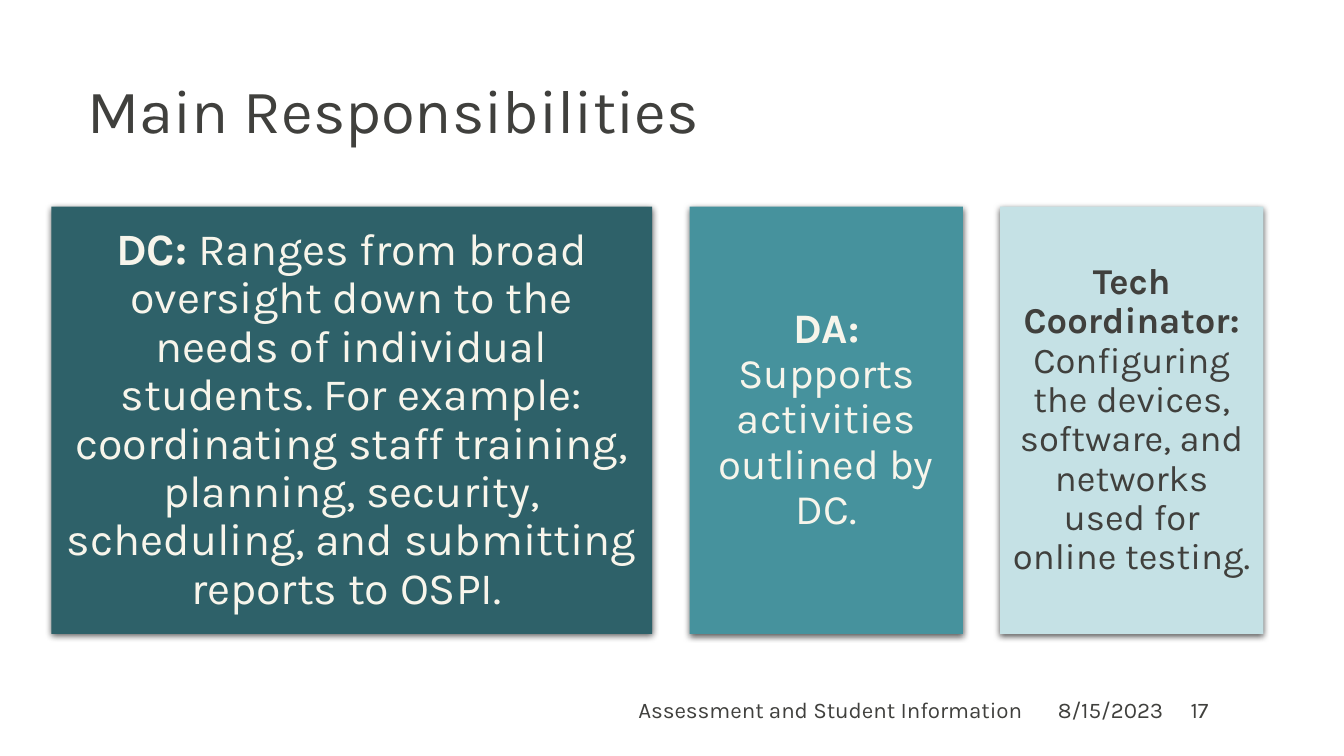
from dataclasses import dataclass

from lxml import etree
from pptx import Presentation
from pptx.dml.color import RGBColor
from pptx.enum.shapes import MSO_SHAPE
from pptx.enum.text import MSO_ANCHOR, PP_ALIGN
from pptx.oxml.ns import qn
from pptx.shapes.autoshape import Shape
from pptx.slide import Slide
from pptx.text.text import TextFrame
from pptx.util import Inches, Pt

RECTANGLE = MSO_SHAPE.RECTANGLE
MIDDLE = MSO_ANCHOR.MIDDLE
LEFT, CENTER, RIGHT = PP_ALIGN.LEFT, PP_ALIGN.CENTER, PP_ALIGN.RIGHT

FONT = "Karla"
COLORS = {
    "dark teal": "2E6169",
    "teal": "46929D",
    "pale teal": "C5E1E5",
    "cream": "F7F5EB",
    "charcoal": "40403D",
    "shadow": "000000",
}
CARD_TOP = 2.05
CARD_HEIGHT = 4.24
CARD_LEFT = 0.51
CARD_GAP = 0.37
FOOTER_TOP = 6.84
FOOTER_HEIGHT = 0.4


@dataclass
class Card:
    role: str
    duty: str
    width: float
    fill: str
    ink: str
    size: int
    inset: float


@dataclass
class Label:
    text: str
    left: float
    top: float
    width: float
    height: float
    size: int
    align: PP_ALIGN
    line_spacing: float = 1.0


CARDS = [
    Card("DC:", " Ranges from broad oversight down to the needs of individual students. "
         "For example: coordinating staff training, planning, security, scheduling, "
         "and submitting reports to OSPI. ", 5.96, "dark teal", "cream", 32, 0.13),
    Card("DA:", " Supports activities outlined by DC.", 2.71, "teal", "cream", 30, 0.12),
    Card("Tech Coordinator:", " Configuring the devices, software, and networks used for "
         "online testing.", 2.61, "pale teal", "charcoal", 26, 0.11),
]
LABELS = [
    Label("Main Responsibilities", 0.77, 0.4, 11.5, 1.45, 44, LEFT, 0.9),
    Label("Assessment and Student Information", 3.88, FOOTER_TOP, 6.36, FOOTER_HEIGHT, 16, RIGHT),
    Label("8/15/2023", 10.18, FOOTER_TOP, 1.67, FOOTER_HEIGHT, 16, CENTER),
    Label("17", 11.71, FOOTER_TOP, 0.7, FOOTER_HEIGHT, 16, LEFT),
]


def write_text(frame: TextFrame, spans: list[tuple[str, bool]], size: int, ink: str,
               align: PP_ALIGN, line_spacing: float) -> None:
    """Fill a frame with one paragraph of (text, bold) spans."""
    frame.word_wrap = True
    frame.vertical_anchor = MIDDLE
    para = frame.paragraphs[0]
    para.alignment = align
    para.line_spacing = line_spacing
    para.font.name = FONT
    para.font.size = Pt(size)
    para.font.color.rgb = RGBColor.from_string(COLORS[ink])
    for text, bold in spans:
        span = para.add_run()
        span.text = text
        span.font.bold = bold


def add_shadow(box: Shape) -> None:
    """Give a box a soft shadow falling straight down."""
    box.shadow.inherit = False
    effects = box.fill._xPr.find(qn("a:effectLst"))
    shadow = etree.SubElement(effects, qn("a:outerShdw"), blurRad=str(Pt(4.5)),
                              dist=str(Pt(1.5)), dir="5400000", rotWithShape="0")
    color = etree.SubElement(shadow, qn("a:srgbClr"), val=COLORS["shadow"])
    etree.SubElement(color, qn("a:alpha"), val="63000")


def add_card(page: Slide, card: Card, left: float) -> None:
    box = page.shapes.add_shape(RECTANGLE, Inches(left), Inches(CARD_TOP),
                                Inches(card.width), Inches(CARD_HEIGHT))
    box.fill.solid()
    box.fill.fore_color.rgb = RGBColor.from_string(COLORS[card.fill])
    box.line.fill.background()
    add_shadow(box)
    frame = box.text_frame
    frame.margin_left = frame.margin_right = Inches(card.inset)
    frame.margin_top = frame.margin_bottom = Inches(card.inset)
    write_text(frame, [(card.role, True), (card.duty, False)],
               card.size, card.ink, CENTER, 0.9)


def add_label(page: Slide, label: Label) -> None:
    box = page.shapes.add_textbox(Inches(label.left), Inches(label.top),
                                  Inches(label.width), Inches(label.height))
    write_text(box.text_frame, [(label.text, False)], label.size, "charcoal",
               label.align, label.line_spacing)


def main() -> None:
    deck = Presentation()
    deck.slide_width, deck.slide_height = Inches(13.33), Inches(7.5)
    page = deck.slides.add_slide(deck.slide_layouts[6])

    # Title and footer
    for label in LABELS:
        add_label(page, label)

    # Responsibility cards, left to right
    left = CARD_LEFT
    for card in CARDS:
        add_card(page, card, left)
        left += card.width + CARD_GAP

    deck.save("out.pptx")


if __name__ == "__main__":
    main()
